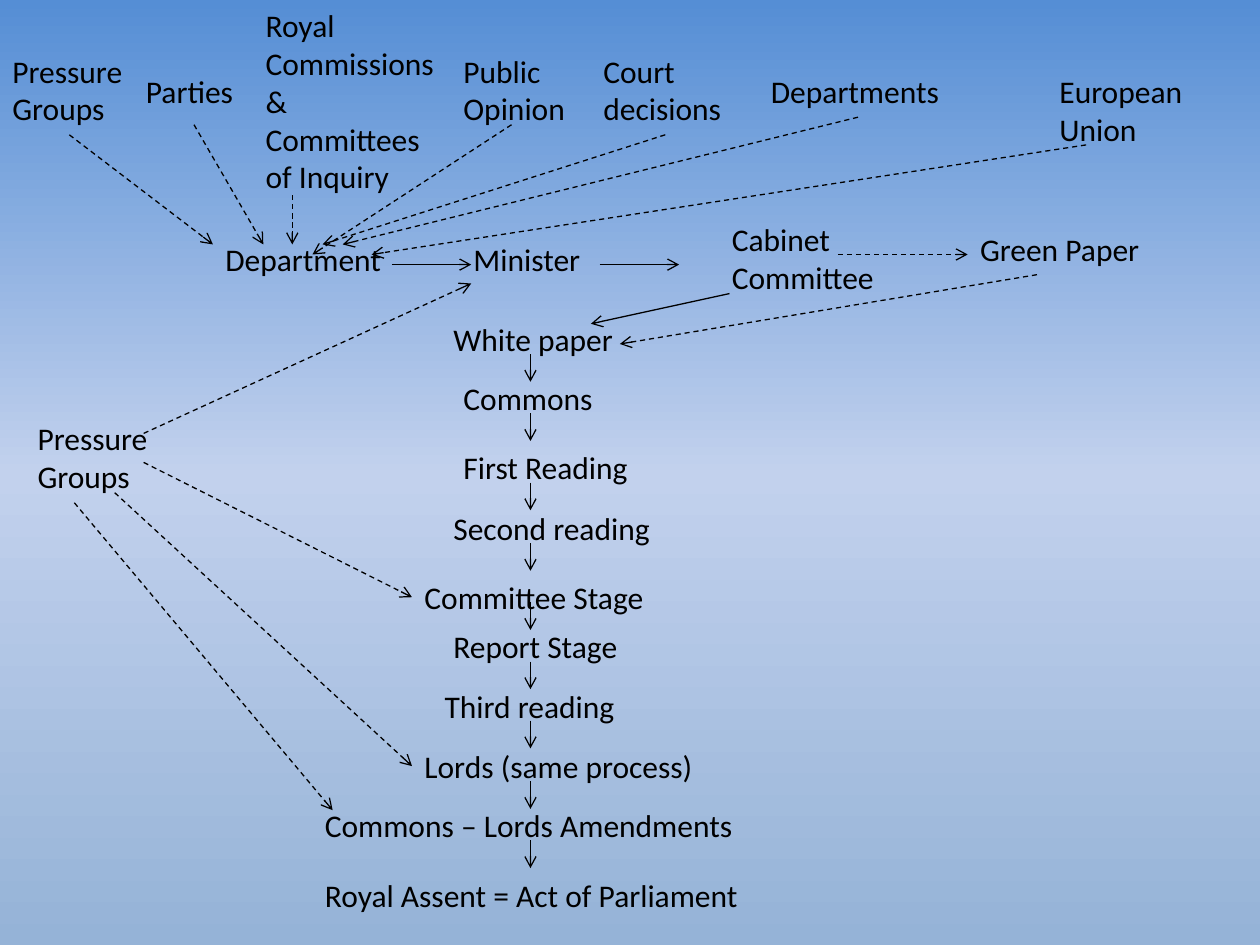
from copy import deepcopy
from dataclasses import dataclass
from itertools import pairwise

from pptx import Presentation
from pptx.dml.color import RGBColor
from pptx.enum.dml import MSO_LINE
from pptx.enum.shapes import MSO_CONNECTOR
from pptx.enum.text import MSO_AUTO_SIZE
from pptx.oxml.ns import qn
from pptx.oxml.xmlchemy import OxmlElement
from pptx.util import Inches, Pt


@dataclass(frozen=True)
class Theme:
    font: str = "Calibri"
    size: float = 18
    line: float = 0.75
    ink: str = "000000"
    sky: tuple = ((0, "558ED5"), (0.5, "C2D1ED"), (1, "95B3D7"))
    cols: float = 10
    rows: float = 7.5
    one: float = 0.4  # height of a one-line label
    two: float = 0.71  # height of a two-line label


def write(frame, text, font, size, color):
    """Put text in a frame with the given format."""
    run = frame.paragraphs[0].add_run()
    run.text = text
    run.font.name = font
    run.font.size = Pt(size)
    run.font.color.rgb = RGBColor.from_string(color)


class Chart:
    """Draws on one slide, with lengths in grid columns and rows."""

    def __init__(self, deck, theme):
        self.theme = theme
        self.slide = deck.slides.add_slide(deck.slide_layouts[6])
        self.col = deck.slide_width / theme.cols
        self.row = deck.slide_height / theme.rows

    def place(self, x, y):
        return round(x * self.col), round(y * self.row)

    def sky(self):
        fill = self.slide.background.fill
        fill.gradient()
        fill.gradient_angle = 270
        stops = self.slide.element.find(".//" + qn("a:gsLst"))
        stops.append(deepcopy(stops[-1]))
        for stop, (pos, color) in zip(fill.gradient_stops, self.theme.sky):
            stop.position = pos
            stop.color.rgb = RGBColor.from_string(color)

    def label(self, text, x, y, wide=1.57, high=None):
        t = self.theme
        box = self.slide.shapes.add_textbox(
            *self.place(x, y), *self.place(wide, high or t.one))
        frame = box.text_frame
        frame.word_wrap = True
        frame.auto_size = MSO_AUTO_SIZE.SHAPE_TO_FIT_TEXT
        write(frame, text, font=t.font, size=t.size, color=t.ink)

    def arrow(self, start, end, dash=False):
        link = self.slide.shapes.add_connector(
            MSO_CONNECTOR.STRAIGHT, *self.place(*start), *self.place(*end))
        link.line.width = Pt(self.theme.line)
        link.line.color.rgb = RGBColor.from_string(self.theme.ink)
        if dash:
            link.line.dash_style = MSO_LINE.DASH
        tip = OxmlElement("a:tailEnd")
        tip.set("type", "arrow")
        link.line._get_or_add_ln().append(tip)
        link._element.spPr.append(OxmlElement("a:effectLst"))


def main():
    theme = Theme()
    deck = Presentation()
    deck.slide_width = Inches(theme.cols)
    deck.slide_height = Inches(theme.rows)
    chart = Chart(deck, theme)
    chart.sky()

    # Sources of policy, each with its arrow to the department
    two = theme.two
    sources = [
        ("Pressure Groups", 0, 0.36, 1.1, two, (0.55, 1.07), (1.69, 1.94)),
        ("Parties", 1.06, 0.52, 0.94, None, (1.54, 0.99), (2.09, 1.94)),
        ("Royal Commissions & Committees of Inquiry", 2.01, 0, 1.57, 1.62,
         (2.32, 1.55), (2.32, 1.94)),
        ("Public Opinion", 3.58, 0.36, 1.1, two, (4.06, 0.99), (2.48, 2.02)),
        ("Court decisions", 4.69, 0.36, 1.18, two, (5.28, 1.07), (2.56, 1.94)),
        ("Departments", 6.02, 0.52, 1.57, None, (6.81, 0.93), (2.72, 1.94)),
        ("European Union", 8.31, 0.52, 1.57, two, (8.62, 1.15), (2.95, 2.02)),
    ]
    for text, x, y, wide, high, start, end in sources:
        chart.label(text, x, y, wide, high)
        chart.arrow(start, end, dash=True)

    # Government row, leading to the white paper
    chart.label("Department", 1.69, 1.86)
    chart.label("Minister", 3.66, 1.86)
    chart.label("Cabinet Committee", 5.71, 1.7, high=two)
    chart.label("Green Paper", 7.68, 1.78)
    for x in (3.11, 4.76):
        chart.arrow((x, 2.1), (x + 0.63, 2.1))
    chart.arrow((5.79, 2.33), (4.69, 2.57))
    chart.arrow((6.65, 2.02), (7.68, 2.02), dash=True)
    chart.arrow((8.23, 2.18), (4.92, 2.73), dash=True)

    # Stages of the bill, top to bottom
    stages = [
        ("White paper", 3.5, 2.49, 1.57),
        ("Commons", 3.58, 2.96, 1.57),
        ("First Reading", 3.58, 3.51, 1.57),
        ("Second reading", 3.5, 3.99, 1.81),
        ("Committee Stage", 3.27, 4.54, 2.05),
        ("Report Stage", 3.5, 4.93, 1.81),
        ("Third reading", 3.43, 5.4, 1.81),
        ("Lords (same process)", 3.27, 5.88, 2.52),
        ("Commons – Lords Amendments", 2.48, 6.35, 3.86),
        ("Royal Assent = Act of Parliament", 2.48, 6.9, 3.62),
    ]
    for stage in stages:
        chart.label(*stage)
    for (_, _, top, _), (_, _, below, _) in pairwise(stages):
        y = min(top + 0.32, below - 0.15)
        chart.arrow((4.21, y), (4.21, y + 0.22))

    # Pressure groups acting on later stages
    chart.label("Pressure Groups", 0.2, 3.28, 1.26, two)
    for start, end in [
        ((1.14, 3.44), (3.74, 2.25)),
        ((1.14, 3.67), (3.27, 4.74)),
        ((0.91, 3.91), (3.27, 6.08)),
        ((0.59, 3.99), (2.64, 6.43)),
    ]:
        chart.arrow(start, end, dash=True)

    deck.save("out.pptx")


if __name__ == "__main__":
    main()
